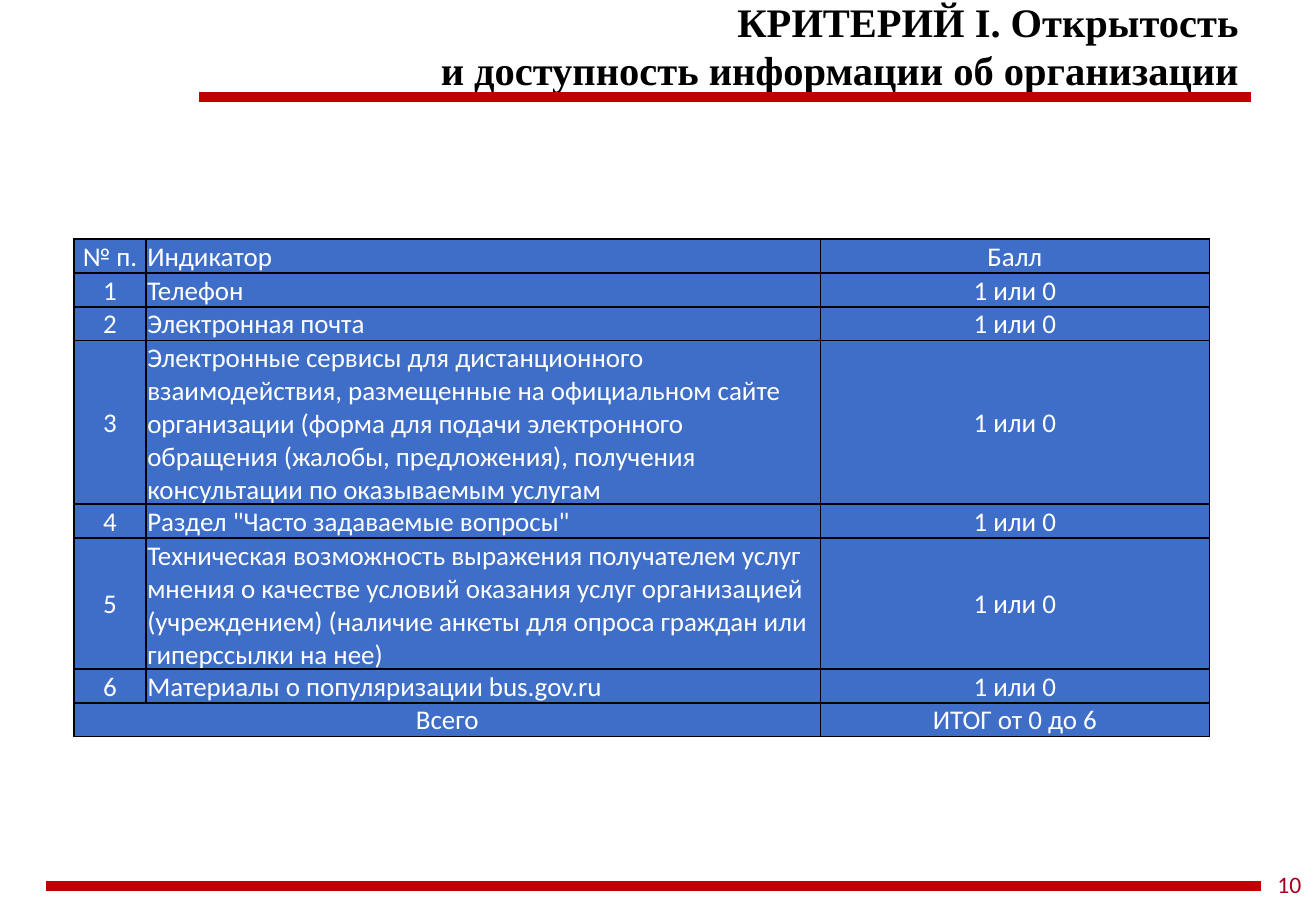
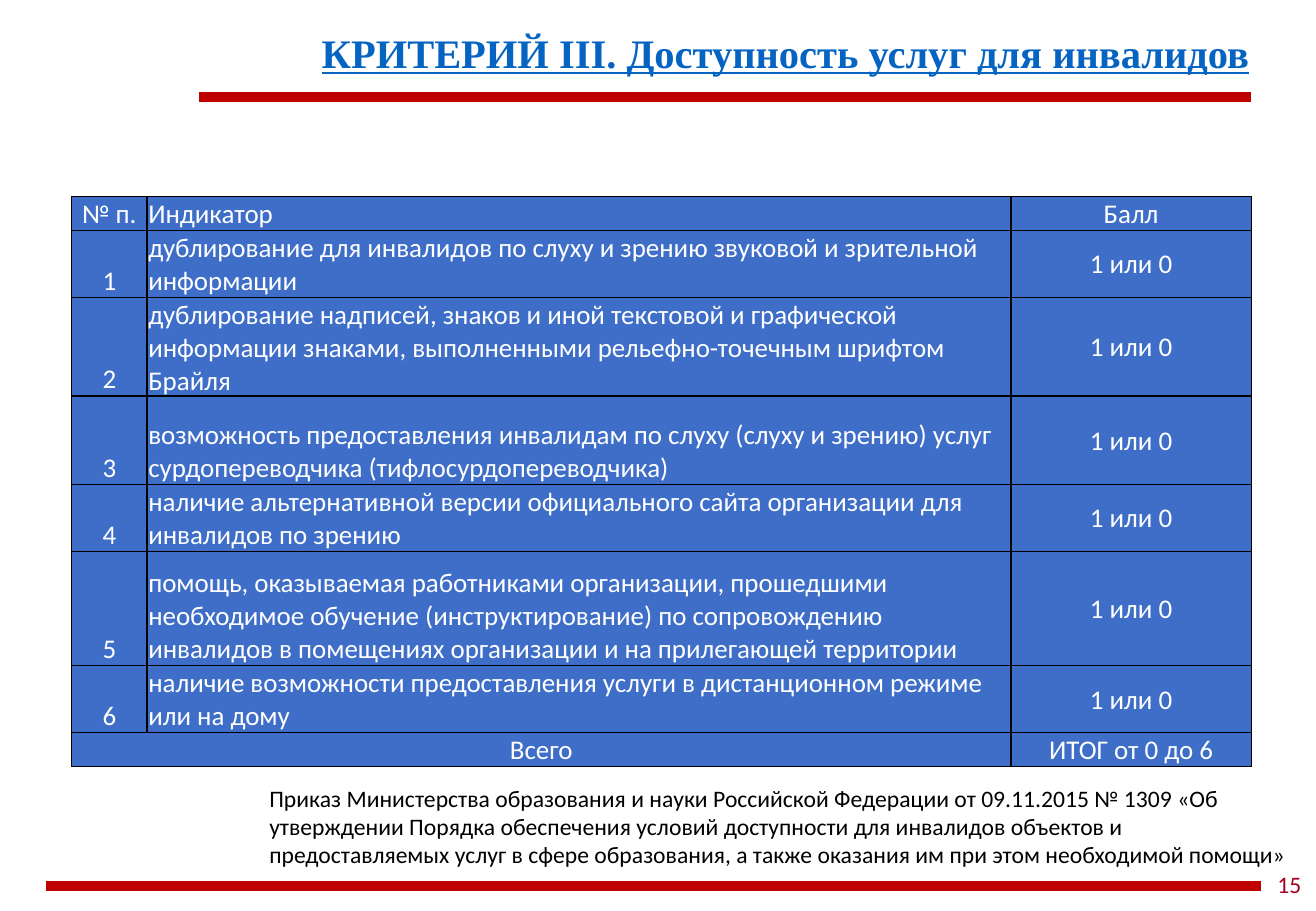
from lxml.etree import SubElement
from pptx import Presentation
from pptx.dml.color import RGBColor
from pptx.enum.shapes import MSO_CONNECTOR
from pptx.enum.text import MSO_ANCHOR as Anchor, MSO_AUTO_SIZE as AutoSize, PP_ALIGN as Align
from pptx.oxml.ns import qn
from pptx.util import Cm, Pt

RED = RGBColor(0xC0, 0x00, 0x00)
CRIMSON = RGBColor(0xA5, 0x00, 0x21)
BLUE = RGBColor(0x3E, 0x6E, 0xC8)
LINK = RGBColor(0x05, 0x63, 0xC1)
BLACK = RGBColor(0x00, 0x00, 0x00)
WHITE = RGBColor(0xFF, 0xFF, 0xFF)
BODY_FONT, TITLE_FONT = "Calibri", "Times New Roman"
TITLE_ONLY = 5

# Lengths are centimetres; boxes are left, top, width, height.
BARS = [(4.17, 26.16, 2.03), (0.97, 26.37, 18.52)]
NUMBER_BOX = (26.37, 17.93, 1.17, 1.12)
HEADER = ("№ п.", "Индикатор", "Балл")
SCORE = "1 или 0"
TOTAL = ("Всего", "", "ИТОГ от 0 до 6")

PAGES = [
    {
        "number": "10",
        "title": "КРИТЕРИЙ I. Открытость \vи доступность информации об организации ",
        "title_box": (2.36, -0.2, 24, 2.31),
        "title_format": {"color": BLACK},
        "table_at": (1.55, 5),
        "columns": (1.5, 14.1, 8.13),
        "rows": (0.69, 0.69, 0.7, 3.4, 0.69, 2.74, 0.69, 0.69),
        "item_anchor": Anchor.MIDDLE,
        "indicators": [
            "Телефон",
            "Электронная почта",
            "Электронные сервисы для дистанционного взаимодействия, размещенные "
            "на официальном сайте организации (форма для подачи электронного "
            "обращения (жалобы, предложения), получения консультации по "
            "оказываемым услугам",
            'Раздел "Часто задаваемые вопросы"',
            "Техническая возможность выражения получателем услуг мнения о качестве "
            "условий оказания услуг организацией (учреждением) (наличие анкеты для "
            "опроса граждан или гиперссылки на нее)",
            "Материалы о популяризации bus.gov.ru",
        ],
    },
    {
        "number": "15",
        "title": "КРИТЕРИЙ III. Доступность услуг для инвалидов",
        "title_box": (5.77, 0.46, 20.6, 1.27),
        "title_format": {"color": LINK, "underline": True},
        "table_at": (1.5, 4.11),
        "columns": (1.57, 18.06, 5.03),
        "rows": (0.7, 1.4, 2.06, 1.85, 1.4, 2.39, 1.4, 0.7),
        "item_anchor": Anchor.BOTTOM,
        "indicators": [
            "дублирование для инвалидов по слуху и зрению звуковой и зрительной "
            "информации",
            "дублирование надписей, знаков и иной текстовой и графической "
            "информации знаками, выполненными рельефно-точечным шрифтом Брайля",
            "возможность предоставления инвалидам по слуху (слуху и зрению) услуг "
            "сурдопереводчика (тифлосурдопереводчика)",
            "наличие альтернативной версии официального сайта организации для "
            "инвалидов по зрению",
            "помощь, оказываемая работниками организации, прошедшими необходимое "
            "обучение (инструктирование) по сопровождению инвалидов в помещениях "
            "организации и на прилегающей территории",
            "наличие возможности предоставления услуги в дистанционном режиме или "
            "на дому",
        ],
        "note": "Приказ Министерства образования и науки Российской Федерации от "
                "09.11.2015 № 1309 «Об утверждении Порядка обеспечения условий "
                "доступности для инвалидов объектов и предоставляемых услуг в сфере "
                "образования, а также оказания им при этом необходимой помощи»",
        "note_box": (5.38, 16.26, 22.05, 2.06),
    },
]


def write(frame, text, size=14, font=BODY_FONT, color=BLACK, bold=False,
          underline=False, align=Align.LEFT, anchor=Anchor.TOP):
    frame.word_wrap = True
    frame.vertical_anchor = anchor
    frame.text = text
    para = frame.paragraphs[0]
    para.alignment = align
    for span in para.runs:
        span.font.size, span.font.name = Pt(size), font
        span.font.bold, span.font.underline = bold, underline
        span.font.color.rgb = color


def add_text(page, box, text, **text_format):
    write(page.shapes.add_textbox(*map(Cm, box)).text_frame, text, **text_format)


def add_title(page, box, text, **text_format):
    title = page.shapes.title
    title.left, title.top, title.width, title.height = map(Cm, box)
    title.text_frame.auto_size = AutoSize.NONE
    write(title.text_frame, text, size=24, font=TITLE_FONT, bold=True,
          align=Align.RIGHT, **text_format)


def add_bar(page, left, right, y):
    bar = page.shapes.add_connector(
        MSO_CONNECTOR.STRAIGHT, Cm(left), Cm(y), Cm(right), Cm(y))
    bar.line.color.rgb, bar.line.width = RED, Pt(6)
    SubElement(bar.element.spPr, qn("a:effectLst"))


def style_cell(cell):
    """Give the cell thin black borders, a blue fill and narrow margins."""
    properties = cell._tc.get_or_add_tcPr()
    for side in ("a:lnL", "a:lnR", "a:lnT", "a:lnB"):
        border = SubElement(properties, qn(side), w=str(Pt(1)))
        fill = SubElement(border, qn("a:solidFill"))
        SubElement(fill, qn("a:srgbClr"), val=str(BLACK))
    cell.fill.solid()
    cell.fill.fore_color.rgb = BLUE
    cell.margin_left = cell.margin_right = cell.margin_top = Cm(0.03)
    cell.margin_bottom = 0


def add_score_table(page, at, columns, heights, indicators, item_anchor):
    items = [(str(i), text, SCORE) for i, text in enumerate(indicators, 1)]
    rows = [HEADER, *items, TOTAL]
    table = page.shapes.add_table(
        len(rows), len(columns), *map(Cm, (*at, sum(columns), sum(heights)))).table
    table.first_row = table.horz_banding = False
    for column, width in zip(table.columns, columns):
        column.width = Cm(width)
    for r, (values, height) in enumerate(zip(rows, heights)):
        table.rows[r].height = Cm(height)
        for c, value in enumerate(values):
            cell = table.cell(r, c)
            style_cell(cell)
            is_item = values in items and c < 2
            cell.vertical_anchor = item_anchor if is_item else Anchor.MIDDLE
            left = c == 1 and values is not TOTAL
            write_cell(cell, value, Align.LEFT if left else Align.CENTER)
    last = len(rows) - 1
    table.cell(last, 0).merge(table.cell(last, 1))


def write_cell(cell, text, align):
    cell.text = text
    para = cell.text_frame.paragraphs[0]
    para.alignment = align
    para.font.size, para.font.name = Pt(16), BODY_FONT
    for span in para.runs:
        span.font.size, span.font.name = Pt(16), BODY_FONT
        span.font.color.rgb = WHITE


def main():
    deck = Presentation()
    deck.slide_width, deck.slide_height = Cm(27.51), Cm(19.05)
    for content in PAGES:
        page = deck.slides.add_slide(deck.slide_layouts[TITLE_ONLY])
        for bar in BARS:
            add_bar(page, *bar)
        add_title(page, content["title_box"], content["title"], **content["title_format"])
        add_text(page, NUMBER_BOX, content["number"], color=CRIMSON,
                 align=Align.CENTER, anchor=Anchor.MIDDLE)
        add_score_table(page, content["table_at"], content["columns"], content["rows"],
                        content["indicators"], content["item_anchor"])
        if "note" in content:
            add_text(page, content["note_box"], content["note"])
    deck.save("out.pptx")


if __name__ == "__main__":
    main()
